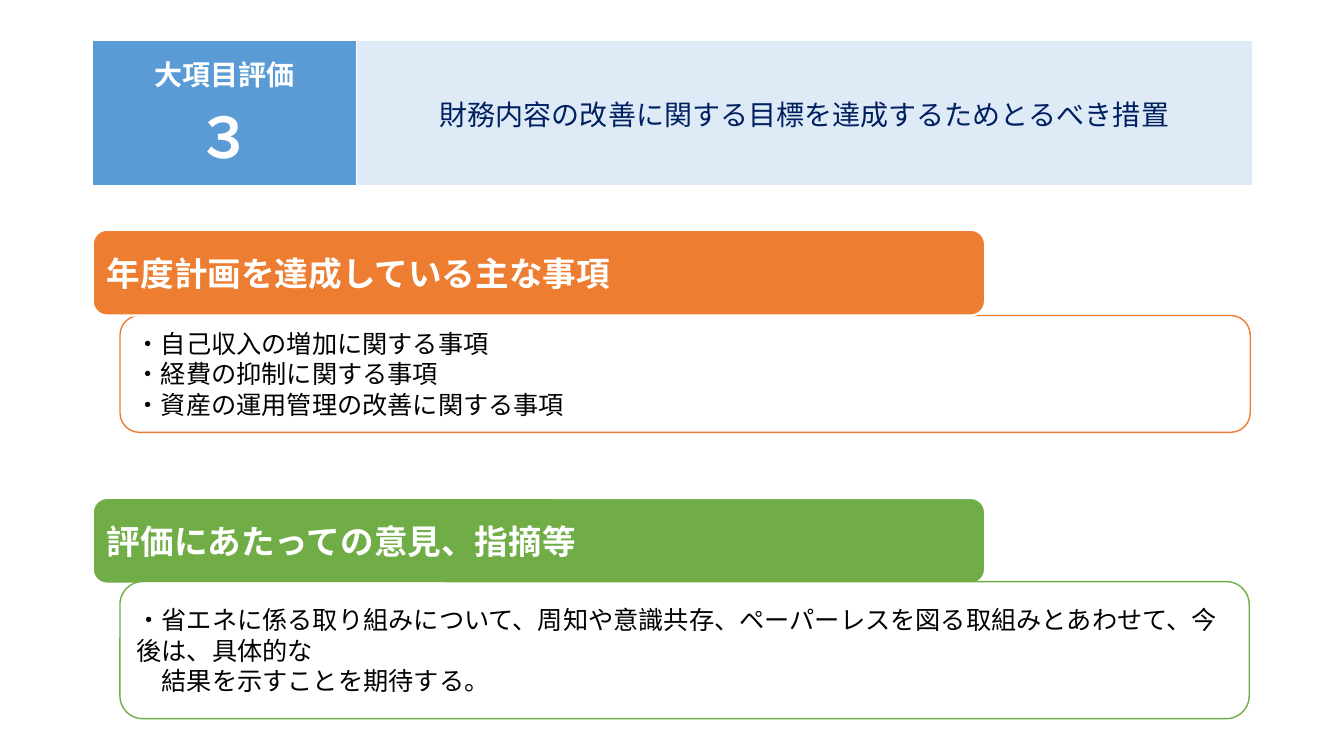
from lxml import etree
from pptx import Presentation
from pptx.dml.color import RGBColor
from pptx.enum.shapes import MSO_SHAPE
from pptx.enum.text import MSO_ANCHOR, PP_ALIGN
from pptx.oxml.ns import qn
from pptx.util import Inches, Pt

ROUNDED = MSO_SHAPE.ROUNDED_RECTANGLE
MIDDLE = MSO_ANCHOR.MIDDLE
CENTER = PP_ALIGN.CENTER
LEFT = PP_ALIGN.LEFT

WHITE = RGBColor(0xFF, 0xFF, 0xFF)
BLACK = RGBColor(0x00, 0x00, 0x00)
NAVY = RGBColor(0x00, 0x20, 0x60)
BLUE = RGBColor(0x5B, 0x9B, 0xD5)
PALE_BLUE = RGBColor(0xDE, 0xEB, 0xF7)
ORANGE = RGBColor(0xED, 0x7D, 0x31)
GREEN = RGBColor(0x70, 0xAD, 0x47)

LATIN_FONT = "Calibri"
JAPANESE_FONT = "Noto Sans CJK JP"
BORDER_WIDTHS = {"a:lnL": 1, "a:lnR": 1, "a:lnT": 1, "a:lnB": 3}


def write_lines(text_frame, lines, sizes, color, bold, align, font_name):
    text_frame.text = "\n".join(lines)
    for para, size in zip(text_frame.paragraphs, sizes):
        para.alignment = align
        for span in para.runs:
            span.font.size = Pt(size)
            span.font.bold = bold
            span.font.color.rgb = color
            span.font.name = font_name
            properties = span.font._element
            etree.SubElement(properties, qn("a:ea"), typeface=JAPANESE_FONT)


def set_borders(cell):
    properties = cell._tc.get_or_add_tcPr()
    for position, (tag, width) in enumerate(BORDER_WIDTHS.items()):
        border = etree.Element(qn(tag), w=str(Pt(width)))
        fill = etree.SubElement(border, qn("a:solidFill"))
        etree.SubElement(fill, qn("a:srgbClr"), val=str(WHITE))
        properties.insert(position, border)


def add_header(page, left, top, width, height, label_width):
    table = page.shapes.add_table(
        1, 2, Inches(left), Inches(top), Inches(width), Inches(height)
    ).table
    table.columns[0].width = Inches(label_width)
    table.columns[1].width = Inches(width - label_width)
    contents = [
        (["大項目評価", "３"], [20, 40], WHITE, True, BLUE),
        (["財務内容の改善に関する目標を達成するためとるべき措置"], [20], NAVY, False, PALE_BLUE),
    ]
    for cell, (lines, sizes, color, bold, fill) in zip(table.iter_cells(), contents):
        cell.fill.solid()
        cell.fill.fore_color.rgb = fill
        cell.vertical_anchor = MIDDLE
        cell.margin_left = cell.margin_right = Inches(0.04)
        cell.margin_top = cell.margin_bottom = 0
        set_borders(cell)
        write_lines(cell.text_frame, lines, sizes, color, bold, CENTER, LATIN_FONT)


def add_panel(page, box, lines, size, color, bold, fill, line, line_width):
    panel = page.shapes.add_shape(ROUNDED, *map(Inches, box))
    panel.shadow.inherit = False
    panel.fill.solid()
    panel.fill.fore_color.rgb = fill
    panel.line.color.rgb = line
    panel.line.width = Pt(line_width)
    panel.text_frame.word_wrap = True
    panel.text_frame.vertical_anchor = MIDDLE
    sizes = [size] * len(lines)
    write_lines(panel.text_frame, lines, sizes, color, bold, LEFT, JAPANESE_FONT)


def add_heading(page, left, top, text, accent):
    add_panel(page, (left, top, 8.85, 0.85), [text], 24, WHITE, True, accent, WHITE, 1.5)


def add_body(page, box, lines, accent):
    add_panel(page, box, lines, 18, BLACK, False, WHITE, accent, 1)


def add_achievements(page, left, top):
    lines = [
        "・自己収入の増加に関する事項",
        "・経費の抑制に関する事項",
        "・資産の運用管理の改善に関する事項",
    ]
    add_body(page, (left + 0.27, top + 0.85, 11.21, 1.16), lines, ORANGE)
    add_heading(page, left, top, "年度計画を達成している主な事項", ORANGE)


def add_opinions(page, left, top):
    lines = [
        "・省エネに係る取り組みについて、周知や意識共存、ペーパーレスを図る取組みとあわせて、今後は、具体的な",
        "　結果を示すことを期待する。",
    ]
    add_heading(page, left, top, "評価にあたっての意見、指摘等", GREEN)
    add_body(page, (left + 0.27, top + 0.83, 11.2, 1.36), lines, GREEN)


def main():
    deck = Presentation()
    deck.slide_width = Inches(13.33)
    deck.slide_height = Inches(7.5)
    page = deck.slides.add_slide(deck.slide_layouts.get_by_name("Blank"))
    left = 0.92
    add_header(page, left, 0.4, 11.5, 1.45, 2.62)
    add_achievements(page, left, 2.28)
    add_opinions(page, left, 4.94)
    deck.save("out.pptx")


if __name__ == "__main__":
    main()
